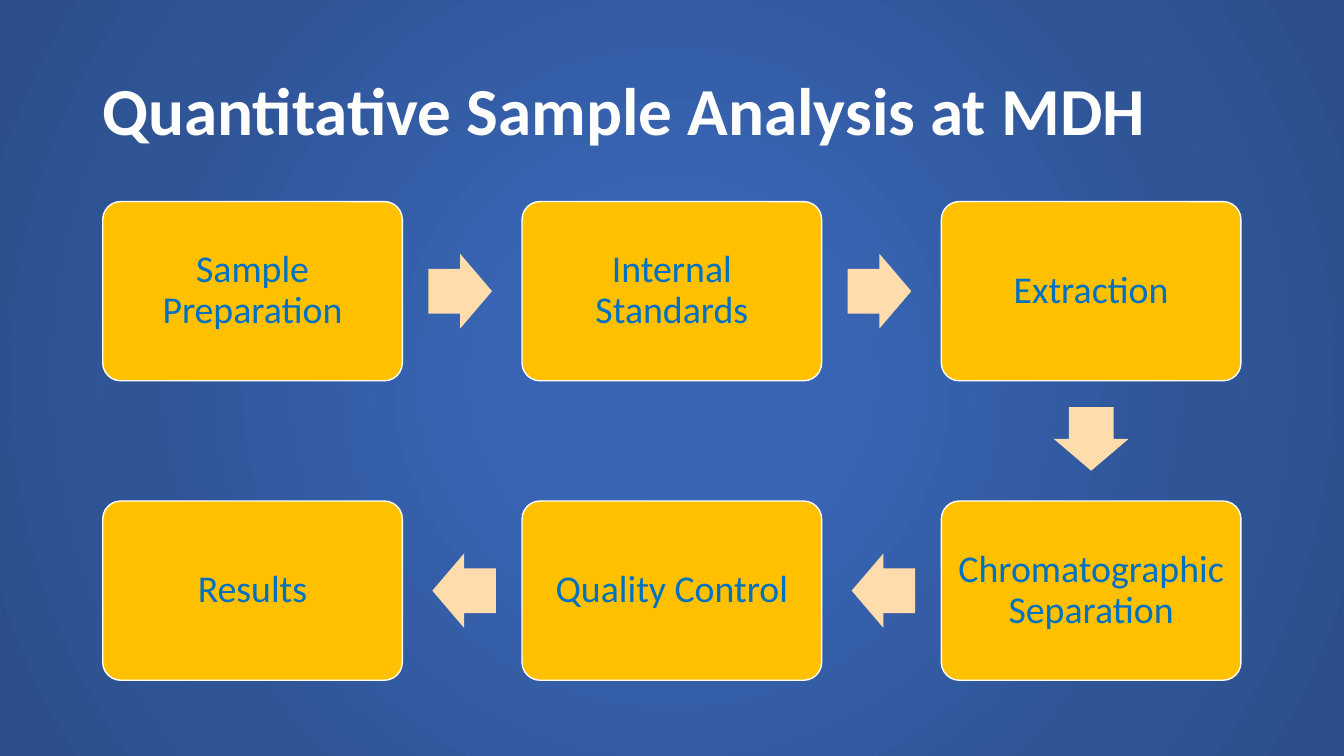
from lxml.etree import SubElement
from pptx import Presentation
from pptx.dml.color import RGBColor
from pptx.enum.shapes import MSO_SHAPE
from pptx.enum.text import MSO_ANCHOR, PP_ALIGN
from pptx.oxml.ns import qn
from pptx.util import Pt

FONT = "Calibri"
BOX_W, BOX_H = 214, 128
ARROW_W, ARROW_H = 45.4, 53.3
ARROW_SHIFT = 1.4
LEFT, TOP = 73.4, 144
STEP_X, STEP_Y = 299.5, 213.9
STEPS = [
    ("Sample Preparation", 0, 0),
    ("Internal Standards", 1, 0),
    ("Extraction", 2, 0),
    ("Chromatographic Separation", 2, 1),
    ("Quality Control", 1, 1),
    ("Results", 0, 1),
]
STOPS = [(0, "3864B3"), (23, "3864B3"), (69, "2F5597"), (97, "2C4F8C")]


def rgb(value):
    """Turn a hex string into a colour."""
    return RGBColor.from_string(value)


def set_background(s):
    """Fill the slide with a circular gradient from its centre."""
    s.background.fill.gradient()
    grad = s.element.xpath(".//p:bgPr/a:gradFill")[0]
    for child in list(grad):
        grad.remove(child)
    stops = SubElement(grad, qn("a:gsLst"))
    for pos, value in STOPS:
        gs = SubElement(stops, qn("a:gs"), pos=str(pos * 1000))
        SubElement(gs, qn("a:srgbClr"), val=value)
    circle = SubElement(grad, qn("a:path"), path="circle")
    SubElement(circle, qn("a:fillToRect"), l="50000", t="50000", r="50000", b="50000")


def set_text(sp, text, size, color, bold=False, align=PP_ALIGN.LEFT):
    """Write one wrapped, vertically centred paragraph into a shape."""
    tf = sp.text_frame
    tf.text = text
    tf.word_wrap = True
    tf.vertical_anchor = MSO_ANCHOR.MIDDLE
    p = tf.paragraphs[0]
    p.alignment = align
    p.line_spacing = 0.9
    font = p.runs[0].font
    font.name, font.size, font.bold = FONT, Pt(size), bold
    font.color.rgb = rgb(color)


def add_title(s, text):
    """Add the slide heading."""
    sp = s.shapes.add_textbox(Pt(66), Pt(28.8), Pt(828), Pt(104.4))
    set_text(sp, text, 48, "FFFFFF", bold=True)


def add_filled(s, kind, x, y, w, h, color, adjustments):
    """Add a preset shape with a plain fill, no line and no shadow."""
    sp = s.shapes.add_shape(kind, Pt(x), Pt(y), Pt(w), Pt(h))
    sp.shadow.inherit = False
    sp.fill.solid()
    sp.fill.fore_color.rgb = rgb(color)
    sp.line.fill.background()
    for i, value in enumerate(adjustments):
        sp.adjustments[i] = value
    return sp


def add_step(s, text, col, row):
    """Add one step of the process at its grid place."""
    x, y = LEFT + col * STEP_X, TOP + row * STEP_Y
    sp = add_filled(s, MSO_SHAPE.ROUNDED_RECTANGLE, x, y, BOX_W, BOX_H, "FFC000", [0.1])
    sp.line.color.rgb = rgb("FFFFFF")
    sp.line.width = Pt(1)
    tf = sp.text_frame
    tf.margin_left = tf.margin_right = tf.margin_top = tf.margin_bottom = Pt(8)
    set_text(sp, text, 27, "0070C0", align=PP_ALIGN.CENTER)


def add_arrow(s, start, end):
    """Add a block arrow in the gap between two neighbouring grid places."""
    (col, row), (next_col, next_row) = start, end
    dx, dy = next_col - col, next_row - row
    cx = LEFT + BOX_W / 2 + (col + dx / 2) * STEP_X - dx * ARROW_SHIFT
    cy = TOP + BOX_H / 2 + (row + dy / 2) * STEP_Y - dy * ARROW_SHIFT
    sp = add_filled(s, MSO_SHAPE.RIGHT_ARROW, cx - ARROW_W / 2, cy - ARROW_H / 2,
                    ARROW_W, ARROW_H, "FFDCAB", [0.6, 0.5])
    sp.rotation = {(1, 0): 0, (0, 1): 90, (-1, 0): 180}[dx, dy]


def main():
    """Build the slide and save it."""
    prs = Presentation()
    prs.slide_width, prs.slide_height = Pt(960), Pt(540)
    s = prs.slides.add_slide(prs.slide_layouts[6])
    set_background(s)
    add_title(s, "Quantitative Sample Analysis at MDH")
    for step in STEPS:
        add_step(s, *step)
    for step, following in zip(STEPS, STEPS[1:]):
        add_arrow(s, step[1:], following[1:])
    prs.save("out.pptx")


if __name__ == "__main__":
    main()
